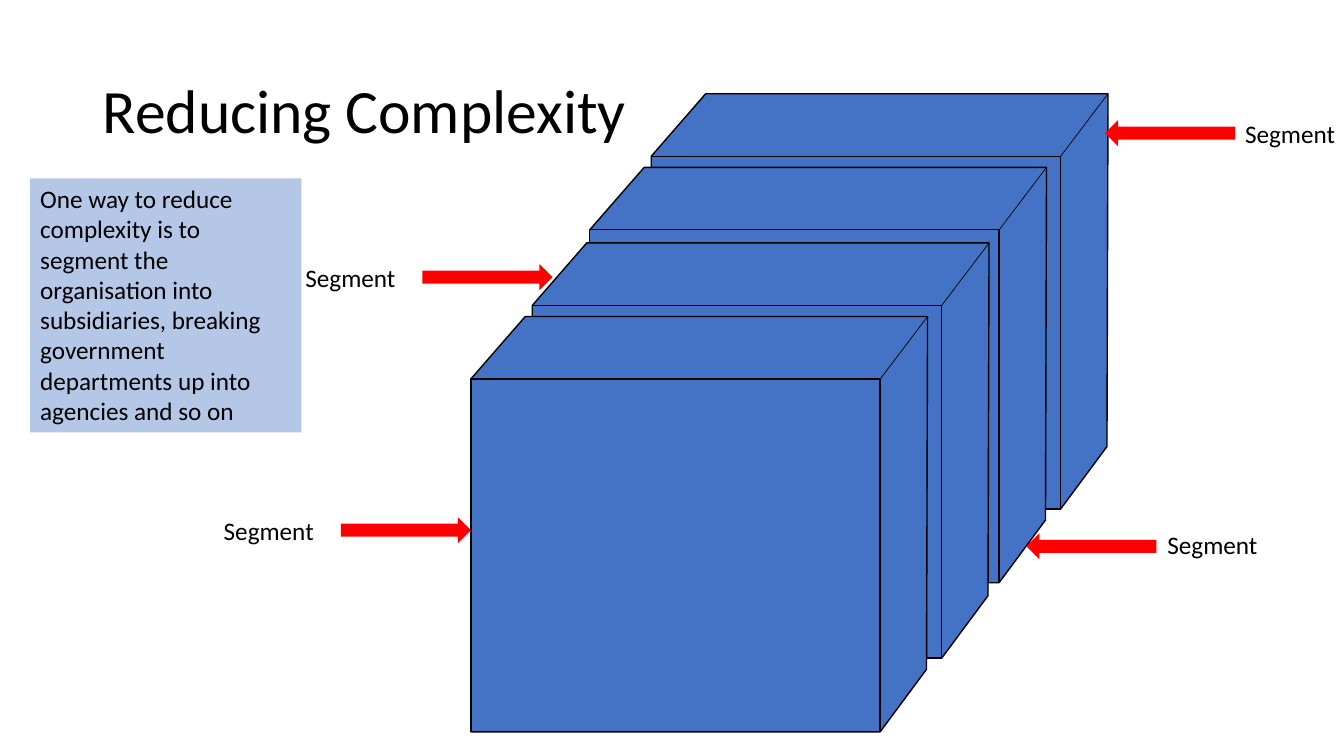
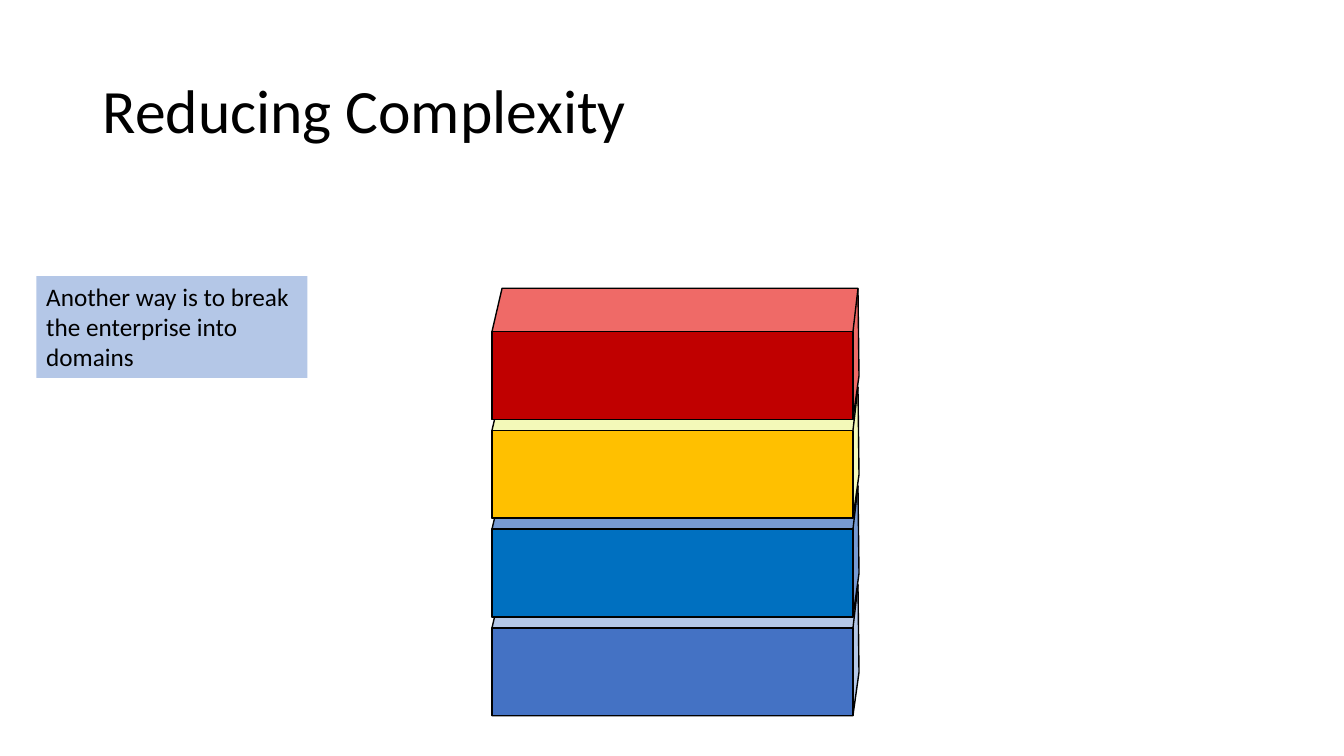
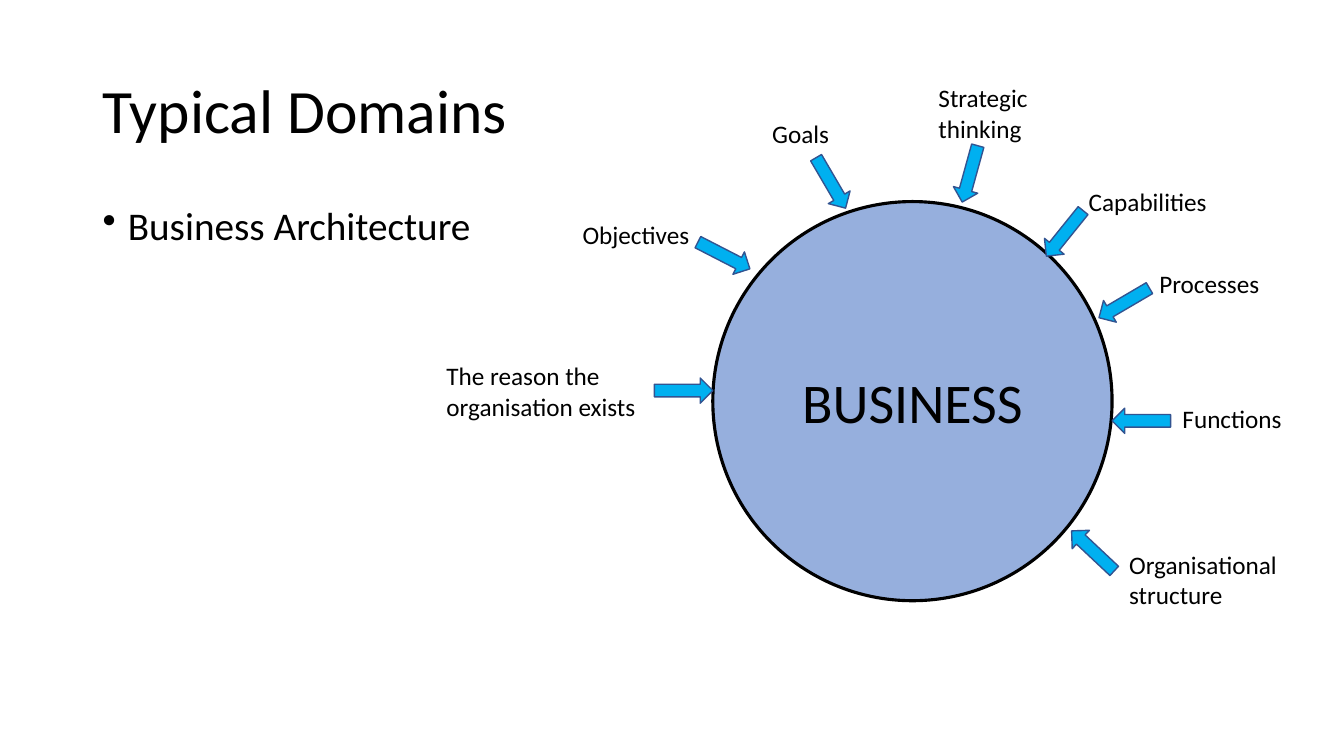
from lxml import etree
from pptx import Presentation
from pptx.dml.color import RGBColor
from pptx.enum.shapes import MSO_CONNECTOR, MSO_SHAPE
from pptx.enum.text import MSO_ANCHOR, PP_ALIGN
from pptx.oxml.ns import qn
from pptx.util import Inches, Pt

STRAIGHT = MSO_CONNECTOR.STRAIGHT
RECTANGLE, OVAL, ARROW = MSO_SHAPE.RECTANGLE, MSO_SHAPE.OVAL, MSO_SHAPE.RIGHT_ARROW
TOP, MIDDLE = MSO_ANCHOR.TOP, MSO_ANCHOR.MIDDLE
LEFT, CENTER = PP_ALIGN.LEFT, PP_ALIGN.CENTER

FONT = "Calibri"
COLORS = {
    "text": "000000", "edge": "000000", "note": "B4C7E7", "block": "4472C4",
    "segment arrow": "FF0000", "domain arrow": "00B0F0", "domain arrow edge": "325491",
    "red": "C00000", "light red": "EF6A67", "yellow": "FFC000", "light yellow": "F3F9B9",
    "blue": "0070C0", "light blue": "779AD3", "pale blue": "B4C7E7",
}

# Slide 1: blocks from back to front, as (left, top)
SEGMENT_BLOCKS = [(6.46, 0.93), (5.85, 1.66), (5.28, 2.41), (4.67, 3.14)]
SEGMENT_FORM = {"front": (4.06, 3.5), "rise": 0.62, "back": (0.54, 4.53),
                "back_corner": 4.52, "slant_width": 0.5}
# (label left, label top, arrow left, arrow top, arrow rotation)
SEGMENT_LABELS = [
    (2.12, 5.06, 3.38, 5.13, 0),
    (2.93, 2.55, 4.19, 2.62, 0),
    (11.48, 5.2, 10.18, 5.29, 180),
    (12.25, 1.12, 10.96, 1.19, 180),
]
SEGMENT_NOTE = ("One way to reduce complexity is to segment the organisation into subsidiaries, "
                "breaking government departments up into agencies and so on")

# Slide 2: layers from bottom to top, as (front colour, side colour)
LAYERS = [("block", "pale blue"), ("blue", "light blue"),
          ("yellow", "light yellow"), ("red", "light red")]
LAYER_FORM = {"front": (3.58, 0.87), "rise": 0.43, "back": (0.1, 3.63),
              "back_corner": 3.64, "slant_width": 1}
LAYER_LEFT, LAYER_BOTTOM_TOP, LAYER_STEP = 4.88, 5.8, 0.98
DOMAIN_NOTE = "Another way is to break the enterprise into domains"

# Slide 3: (label, label box, arrow left, arrow top, arrow rotation)
BUSINESS_ASPECTS = [
    ("The reason the organisation exists", (4.33, 3.53, 2.36, 0.71), 6.49, 3.75, 0),
    ("Objectives", (5.68, 2.13, 2.36, 0.4), 6.89, 2.41, 27.2),
    ("Goals", (7.56, 1.12, 1.02, 0.4), 7.95, 1.69, 59.7),
    ("Strategic thinking", (9.21, 0.77, 1.27, 0.71), 9.33, 1.6, 105.4),
    ("Capabilities", (10.7, 1.8, 1.46, 0.4), 10.27, 2.19, 128.9),
    ("Processes", (11.4, 2.61, 1.27, 0.4), 10.86, 2.88, 149.6),
    ("Functions", (11.63, 3.95, 1.27, 0.4), 11.03, 4.05, 180),
    ("Organisational structure", (11.1, 5.4, 1.71, 0.71), 10.55, 5.34, 223.2),
]


def rgb(name):
    return RGBColor.from_string(COLORS[name])


def write(shape, text, size=18, anchor=TOP, align=LEFT):
    frame = shape.text_frame
    frame.word_wrap = True
    frame.vertical_anchor = anchor
    frame.text = text
    paragraph = frame.paragraphs[0]
    paragraph.alignment = align
    font = paragraph.runs[0].font
    font.name, font.size = FONT, Pt(size)
    font.color.rgb = rgb("text")
    return paragraph


def paint(shape, fill, line=None, width=1):
    shape.shadow.inherit = False
    shape.fill.solid()
    shape.fill.fore_color.rgb = rgb(fill)
    if line:
        shape.line.color.rgb = rgb(line)
        shape.line.width = Pt(width)
    else:
        shape.line.fill.background()


def add_text(slide, text, box, **style):
    return write(slide.shapes.add_textbox(*map(Inches, box)), text, **style)


def add_painted(slide, kind, box, fill, line=None, width=1):
    shape = slide.shapes.add_shape(kind, *map(Inches, box))
    paint(shape, fill, line, width)
    return shape


def add_titled_slide(presentation, title):
    slide = presentation.slides.add_slide(presentation.slide_layouts[6])
    paragraph = add_text(slide, title, (0.92, 0.4, 11.5, 1.45), size=44, anchor=MIDDLE)
    paragraph.line_spacing = 0.9
    return slide


def add_note(slide, text, box):
    write(add_painted(slide, RECTANGLE, box, "note"), text)


def add_block(slide, left, top, front_fill, side_fill, front, rise, back, back_corner, slant_width):
    """Draw a solid: its silhouette, its front face, and the slanted edge between top and side."""
    width, height = front
    back_left, back_right = back
    outline = [(0, rise), (back_left, 0), (back_right, 0), (back_corner, height),
               (width, rise + height), (0, rise + height)]
    points = [(Inches(left + x), Inches(top + y)) for x, y in outline]
    builder = slide.shapes.build_freeform(*points[0])
    builder.add_line_segments(points[1:], close=True)
    paint(builder.convert_to_shape(), side_fill, "edge")
    add_painted(slide, RECTANGLE, (left, top + rise, width, height), front_fill, "edge")
    slant = slide.shapes.add_connector(
        STRAIGHT, Inches(left + width), Inches(top + rise), Inches(left + back_right), Inches(top))
    slant.line.color.rgb = rgb("edge")
    slant.line.width = Pt(slant_width)
    etree.SubElement(slant._element.spPr, qn("a:effectLst"))


def add_bullet(paragraph):
    properties = paragraph._p.get_or_add_pPr()
    properties.set("marL", str(Inches(0.25)))
    properties.set("indent", str(-Inches(0.25)))
    etree.SubElement(properties, qn("a:buChar")).set("char", "•")


def build_segments(presentation):
    slide = add_titled_slide(presentation, "Reducing Complexity")
    for left, top in SEGMENT_BLOCKS:
        add_block(slide, left, top, "block", "block", **SEGMENT_FORM)
    for label_left, label_top, arrow_left, arrow_top, rotation in SEGMENT_LABELS:
        add_text(slide, "Segment", (label_left, label_top, 1.21, 0.4))
        arrow = add_painted(slide, ARROW, (arrow_left, arrow_top, 1.29, 0.26), "segment arrow")
        arrow.rotation = rotation
    add_note(slide, SEGMENT_NOTE, (0.3, 1.77, 2.69, 2.52))


def build_layers(presentation):
    slide = add_titled_slide(presentation, "Reducing Complexity")
    add_note(slide, DOMAIN_NOTE, (0.36, 2.74, 2.69, 1.01))
    for index, (front_fill, side_fill) in enumerate(LAYERS):
        top = LAYER_BOTTOM_TOP - index * LAYER_STEP
        add_block(slide, LAYER_LEFT, top, front_fill, side_fill, **LAYER_FORM)


def build_business(presentation):
    slide = add_titled_slide(presentation, "Typical Domains")
    bullet = add_text(slide, "Business Architecture", (0.92, 2, 4.84, 1.26), size=28)
    bullet.line_spacing = 0.9
    bullet.space_before = Pt(10)
    add_bullet(bullet)

    circle = add_painted(slide, OVAL, (7.07, 2, 3.96, 3.96), "block", "edge", 2.25)
    fill_color = circle._element.spPr.find(qn("a:solidFill")).find(qn("a:srgbClr"))
    etree.SubElement(fill_color, qn("a:alpha")).set("val", "56000")
    write(circle, "BUSINESS", size=40, anchor=MIDDLE, align=CENTER)

    for label, box, arrow_left, arrow_top, rotation in BUSINESS_ASPECTS:
        add_text(slide, label, box)
        arrow = add_painted(slide, ARROW, (arrow_left, arrow_top, 0.58, 0.25),
                            "domain arrow", "domain arrow edge")
        arrow.rotation = rotation


def main():
    presentation = Presentation()
    presentation.slide_width, presentation.slide_height = Inches(13.33), Inches(7.5)
    build_segments(presentation)
    build_layers(presentation)
    build_business(presentation)
    presentation.save("out.pptx")


if __name__ == "__main__":
    main()
